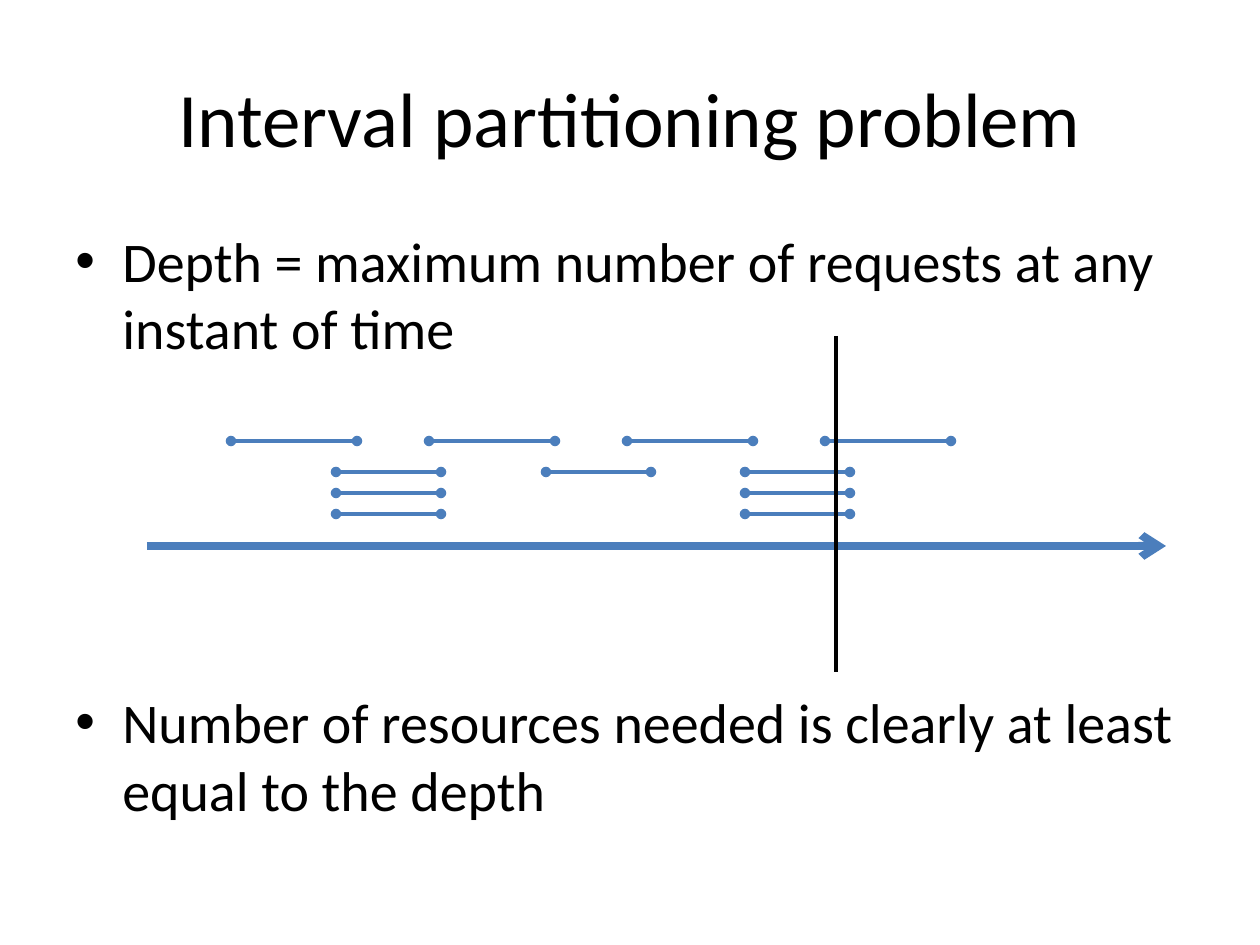
from lxml import etree
from pptx import Presentation
from pptx.dml.color import RGBColor
from pptx.enum.shapes import MSO_CONNECTOR
from pptx.enum.text import MSO_ANCHOR, PP_ALIGN
from pptx.oxml.ns import qn
from pptx.util import Emu, Pt

STRAIGHT = MSO_CONNECTOR.STRAIGHT
MIDDLE, TOP = MSO_ANCHOR.MIDDLE, MSO_ANCHOR.TOP
CENTER, LEFT = PP_ALIGN.CENTER, PP_ALIGN.LEFT
EMU_PER_PX = 914400 / 126
BLUE, BLACK = "4B7EBC", "000000"


def px(length):
    return Emu(round(length * EMU_PER_PX))


def add_line(x1, y1, x2, y2, color, width, head=None, tail=None):
    line = slide.shapes.add_connector(STRAIGHT, px(x1), px(y1), px(x2), px(y2))
    line.line.color.rgb = RGBColor.from_string(color)
    line.line.width = Pt(width)
    ln = line.line._get_or_add_ln()
    for tag, end in (("a:headEnd", head), ("a:tailEnd", tail)):
        if end:
            etree.SubElement(ln, qn(tag), type=end)
    etree.SubElement(line._element.spPr, qn("a:effectLst"))


prs = Presentation()
prs.slide_width, prs.slide_height = px(1260), px(945)
slide = prs.slides.add_slide(prs.slide_layouts[6])

# Title and bullets: top, height, anchor, alignment, size, paragraphs
texts = [
    (38, 157, MIDDLE, CENTER, 44, ["Interval partitioning problem"]),
    (220, 624, TOP, LEFT, 32, [
        "Depth = maximum number of requests at any instant of time",
        "Number of resources needed is clearly at least equal to the depth",
    ]),
]
for top, height, anchor, alignment, size, paragraphs in texts:
    frame = slide.shapes.add_textbox(px(63), px(top), px(1134), px(height)).text_frame
    frame.word_wrap = True
    frame.vertical_anchor = anchor
    frame.text = "\n".join(paragraphs)
    for paragraph in frame.paragraphs:
        paragraph.alignment = alignment
        paragraph.font.name = "Calibri"
        paragraph.font.size = Pt(size)
        paragraph.font.color.rgb = RGBColor.from_string(BLACK)

# Bullets, with room for the diagram between them
for bullet in frame.paragraphs:
    props = bullet._p.get_or_add_pPr()
    props.set("marL", str(px(47)))
    props.set("indent", str(-px(47)))
    props.insert_element_before(
        props.makeelement(qn("a:buFont"), {"typeface": "Arial"}), "a:defRPr")
    props.insert_element_before(
        props.makeelement(qn("a:buChar"), {"char": "•"}), "a:defRPr")
frame.paragraphs[1].space_before = Pt(187)

# Time axis
add_line(147, 546, 1166, 546, BLUE, 4.5, tail="arrow")

# Requests: one long row, then stacks of shorter ones
requests = [(231 + 198 * i, 441, 126) for i in range(4)]
for start, depth in ((336, 3), (546, 1), (745, 3)):
    requests += [(start, 472 + 21 * level, 105) for level in range(depth)]
for start, y, length in requests:
    add_line(start, y, start + length, y, BLUE, 2, "oval", "oval")

# Instant of maximum depth
add_line(836, 336, 836, 672, BLACK, 2.5)

prs.save("out.pptx")
